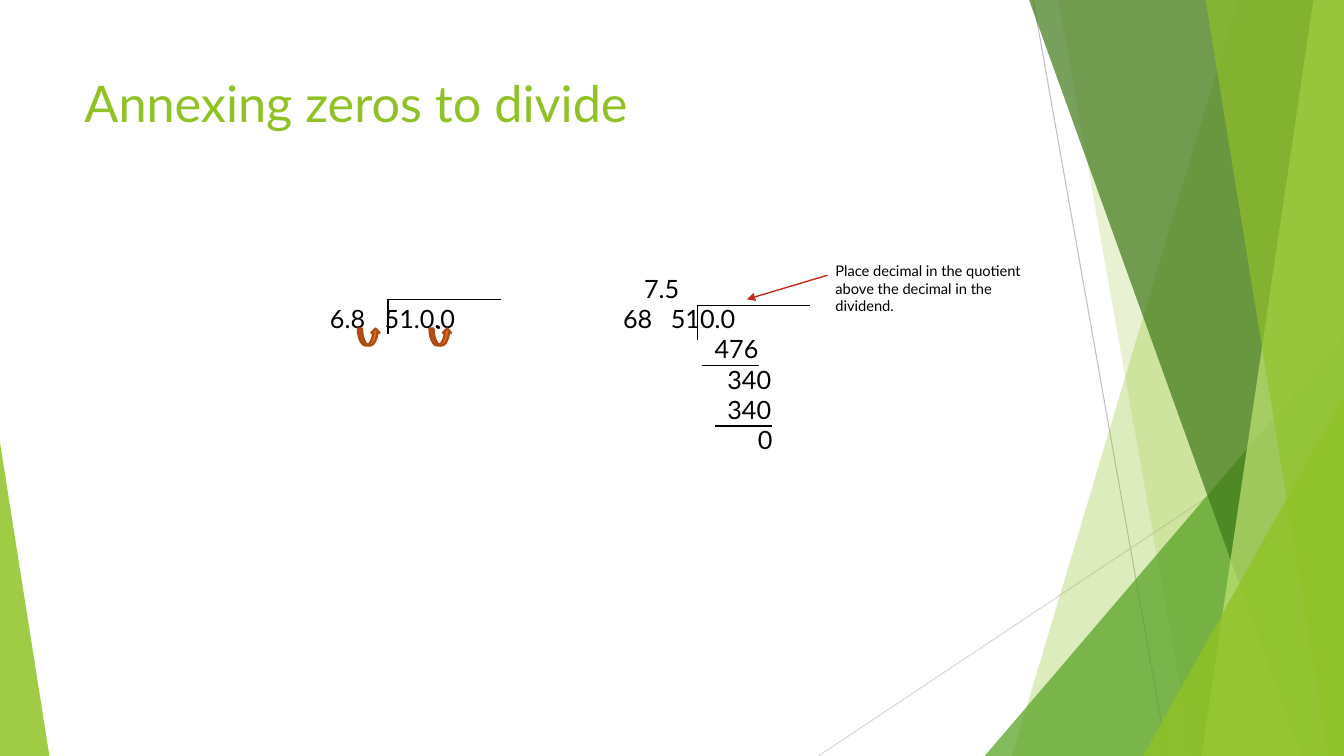
"""Build a slide showing how to annex zeros in a decimal long division."""
from typing import NamedTuple

from lxml import etree
from pptx import Presentation
from pptx.dml.color import RGBColor
from pptx.enum.shapes import MSO_CONNECTOR, MSO_SHAPE
from pptx.enum.text import MSO_ANCHOR, PP_ALIGN
from pptx.oxml.ns import qn
from pptx.util import Pt

STRAIGHT = MSO_CONNECTOR.STRAIGHT
TRIANGLE = MSO_SHAPE.ISOSCELES_TRIANGLE
CURVED_ARROW = MSO_SHAPE.CURVED_DOWN_ARROW
MIDDLE = MSO_ANCHOR.MIDDLE
CENTER = PP_ALIGN.CENTER

GREEN = RGBColor(0x90, 0xC2, 0x26)
LEAF = RGBColor(0x54, 0xA0, 0x21)
FOREST = RGBColor(0x3F, 0x78, 0x19)
LIME = RGBColor(0xC0, 0xE4, 0x74)
GREY = RGBColor(0xBF, 0xBF, 0xBF)
PALE_GREY = RGBColor(0xD9, 0xD9, 0xD9)
BLACK = RGBColor(0, 0, 0)
RED = RGBColor(0xC4, 0x2F, 0x1A)
ORANGE = RGBColor(0xE7, 0x66, 0x18)
BROWN = RGBColor(0xAB, 0x4B, 0x12)

FONT = "Lato"
WIDTH, HEIGHT = 960, 540
ROW_TOP, ROW_STEP = 195.1, 21.6


class Band(NamedTuple):
    """A facet reaching from a slanted left edge to the right of the slide."""
    top_x: float
    bottom_x: float
    color: RGBColor
    opacity: int


class Corner(NamedTuple):
    """A right triangle standing on the bottom of the slide."""
    left: float
    top: float
    width: float
    apex: float
    color: RGBColor
    opacity: int


class Line(NamedTuple):
    """A straight line between two points."""
    x1: float
    y1: float
    x2: float
    y2: float
    color: RGBColor = BLACK
    weight: float = 1
    arrow: bool = False


class Label(NamedTuple):
    """A block of text in a box."""
    text: str
    left: float
    top: float
    width: float
    height: float
    size: float = 18
    color: RGBColor = BLACK
    inset: float = 0


class Number(NamedTuple):
    """A number of the long division, placed on a row of the working."""
    text: str
    left: float
    row: int


FACETS = [
    Band(884.2, 722.9, GREEN, 30),
    Band(756, 851.8, GREEN, 20),
    Corner(703.4, 239.8, 256.6, 1, LEAF, 72),
    Band(735.1, 929.5, FOREST, 70),
    Band(938.2, 858.2, LIME, 70),
    Band(861.1, 949, GREEN, 65),
    Corner(816.5, 283, 143.5, 1, GREEN, 80),
    Corner(0, 316.1, 35.3, 0, GREEN, 85),
]
BACK_LINES = [
    Line(738, 0, 833.8, HEIGHT, GREY, 0.75),
    Line(WIDTH, 290.2, 584.6, HEIGHT, PALE_GREY, 0.75),
]
WORK_LINES = [
    Line(501.4, 261.1, 542.1, 261.1),
    Line(510.7, 304.3, 551.4, 304.3),
    Line(591.1, 196.6, 533.5, 213.8, RED, arrow=True),
]
BRACKETS = [(277.2, 213.8), (498.2, 218.2)]
LABELS = [
    Label("Annexing zeros to divide", 53.3, 48.2, 676.8, 103.7, 36, GREEN, 7.2),
    Label("Place decimal in the quotient above the decimal in the dividend.",
          589.7, 183.6, 157, 45.4, 10.5, BLACK, 7.2),
]
NUMBERS = [
    Number("7.5", 460, 0),
    Number("6.8", 235.7, 1),
    Number("51.0.0", 274.8, 1),
    Number("68", 445, 1),
    Number("510.0", 479.2, 1),
    Number("476", 510.4, 2),
    Number("340", 519.5, 3),
    Number("340", 519.5, 4),
    Number("0", 541.4, 5),
]
SHIFT_ARROWS = [(255.6, ""), (306.7, ".")]


def paint(sp, color: RGBColor, opacity: int) -> None:
    """Give a facet a translucent fill and no outline."""
    sp.shadow.inherit = False
    sp.fill.solid()
    sp.fill.fore_color.rgb = color
    sp.line.fill.background()
    clr = sp._element.spPr.find(qn("a:solidFill"))[0]
    etree.SubElement(clr, qn("a:alpha")).set("val", str(opacity * 1000))


def add_band(shapes, b: Band) -> None:
    """Draw a slanted band."""
    fb = shapes.build_freeform(Pt(b.top_x), 0)
    fb.add_line_segments([(Pt(WIDTH), 0), (Pt(WIDTH), Pt(HEIGHT)),
                          (Pt(b.bottom_x), Pt(HEIGHT))])
    paint(fb.convert_to_shape(), b.color, b.opacity)


def add_corner(shapes, c: Corner) -> None:
    """Draw a corner triangle."""
    sp = shapes.add_shape(TRIANGLE, Pt(c.left), Pt(c.top), Pt(c.width), Pt(HEIGHT - c.top))
    sp.adjustments[0] = c.apex
    paint(sp, c.color, c.opacity)


def add_line(shapes, ln: Line) -> None:
    """Draw a line, with an arrowhead if asked."""
    cx = shapes.add_connector(STRAIGHT, Pt(ln.x1), Pt(ln.y1), Pt(ln.x2), Pt(ln.y2))
    cx.line.color.rgb = ln.color
    cx.line.width = Pt(ln.weight)
    if ln.arrow:
        etree.SubElement(cx.line._get_or_add_ln(), qn("a:tailEnd")).set("type", "triangle")
    etree.SubElement(cx._element.spPr, qn("a:effectLst"))


def write(tf, text: str, size: float, color: RGBColor):
    """Write one paragraph and return it."""
    p = tf.paragraphs[0]
    p.text = text
    p.font.name = FONT
    p.font.size = Pt(size)
    p.font.color.rgb = color
    return p


def add_label(shapes, lb: Label) -> None:
    """Add a text box."""
    tf = shapes.add_textbox(Pt(lb.left), Pt(lb.top), Pt(lb.width), Pt(lb.height)).text_frame
    tf.word_wrap = True
    tf.margin_left = tf.margin_right = Pt(lb.inset)
    tf.margin_top = tf.margin_bottom = Pt(lb.inset / 2)
    write(tf, lb.text, lb.size, lb.color)


def add_shift_arrow(shapes, left: float, text: str) -> None:
    """Add the curved arrow that moves a decimal point."""
    sp = shapes.add_shape(CURVED_ARROW, Pt(left), Pt(234.7), Pt(15.8), Pt(12.2))
    sp.shadow.inherit = False
    sp.fill.solid()
    sp.fill.fore_color.rgb = ORANGE
    sp.line.color.rgb = BROWN
    sp.line.width = Pt(1.5)
    sp._element.spPr.find(qn("a:xfrm")).set("flipV", "1")
    if text:
        sp.text_frame.vertical_anchor = MIDDLE
        write(sp.text_frame, text, 18, BLACK).alignment = CENTER


def main() -> None:
    """Build and save the slide."""
    prs = Presentation()
    prs.slide_width, prs.slide_height = Pt(WIDTH), Pt(HEIGHT)
    shapes = prs.slides.add_slide(prs.slide_layouts[6]).shapes
    for ln in BACK_LINES:
        add_line(shapes, ln)
    for facet in FACETS:
        if isinstance(facet, Band):
            add_band(shapes, facet)
        else:
            add_corner(shapes, facet)
    for lb in LABELS:
        add_label(shapes, lb)
    for n in NUMBERS:
        add_label(shapes, Label(n.text, n.left, ROW_TOP + n.row * ROW_STEP, 60, ROW_STEP))
    for x, y in BRACKETS:
        add_line(shapes, Line(x, y + 24.5, x, y))
        add_line(shapes, Line(x, y, x + 80.6, y))
    for ln in WORK_LINES:
        add_line(shapes, ln)
    for left, text in SHIFT_ARROWS:
        add_shift_arrow(shapes, left, text)
    prs.save("out.pptx")


if __name__ == "__main__":
    main()
